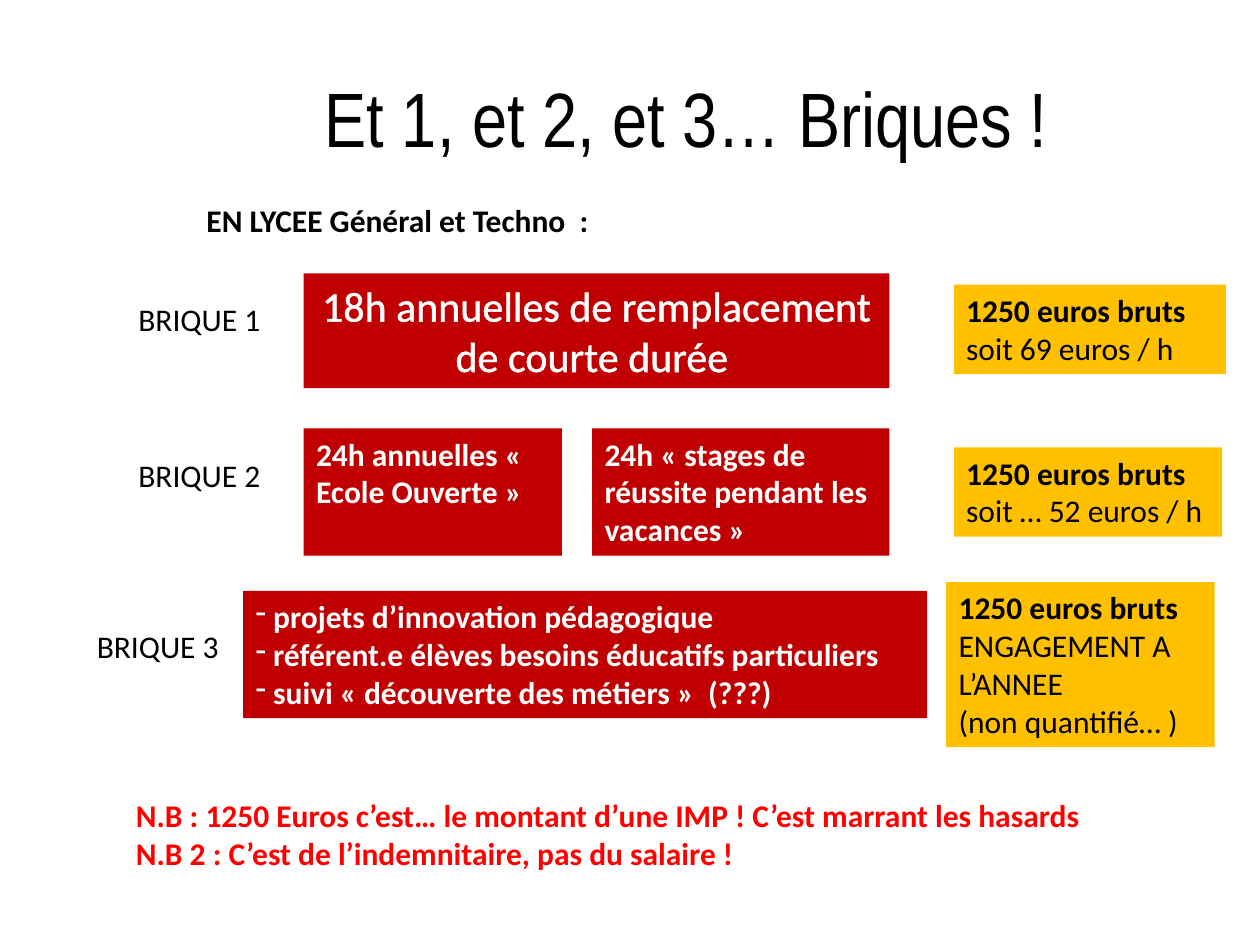
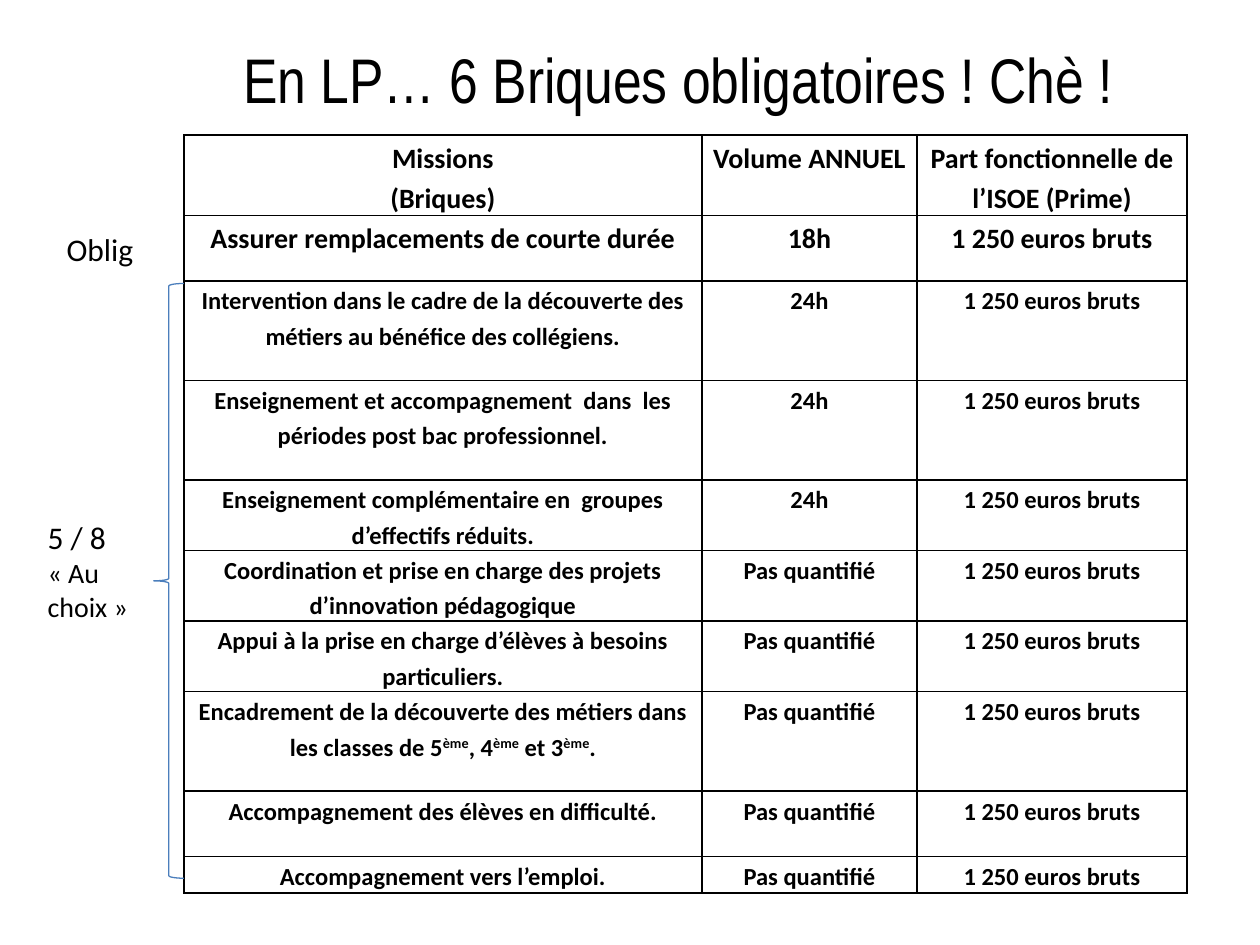
import pptx
import pptx.util
import pptx.dml.color
import pptx.enum.shapes
import pptx.enum.text
import pptx.oxml
import pptx.oxml.ns

Inches = pptx.util.Inches
Pt = pptx.util.Pt
ALIGN = pptx.enum.text.PP_ALIGN
SHAPE = pptx.enum.shapes.MSO_SHAPE
NS = pptx.oxml.ns.nsdecls("a")

COLORS = {
    "black": "000000",
    "white": "FFFFFF",
    "brick": "C00000",
    "amber": "FFC000",
    "red": "FF0000",
    "brace": "4B7EBC",
}
BODY_FONT = "Calibri"
TITLE_FONT = "Arial Narrow"

BONUS = "1250 euros bruts"
PRIME = "1 250 euros bruts"
UNCOUNTED = "Pas quantifié"
COLUMN_WIDTHS = [4.11, 1.71, 2.14]
MISSIONS = [
    (0.64, 16, "Missions\n(Briques)", "Volume ANNUEL", "Part fonctionnelle de l’ISOE (Prime)"),
    (0.52, 16, "Assurer remplacements de courte durée", "18h", PRIME),
    (0.79, 14, "Intervention dans le cadre de la découverte des métiers au bénéfice des collégiens.",
     "24h", PRIME),
    (0.79, 14, "Enseignement et accompagnement  dans  les périodes post bac professionnel.",
     "24h", PRIME),
    (0.56, 14, "Enseignement complémentaire en  groupes d’effectifs réduits.", "24h", PRIME),
    (0.56, 14, "Coordination et prise en charge des projets d’innovation pédagogique",
     UNCOUNTED, PRIME),
    (0.56, 14, "Appui à la prise en charge d’élèves à besoins particuliers.", UNCOUNTED, PRIME),
    (0.79, 14, "Encadrement de la découverte des métiers dans les classes de 5^ème^, 4^ème^ et 3^ème^.",
     UNCOUNTED, PRIME),
    (0.52, 14, "Accompagnement des élèves en difficulté.", UNCOUNTED, PRIME),
    (0.29, 14, "Accompagnement vers l’emploi.", UNCOUNTED, PRIME),
]


def rgb(name):
    """Return the named colour."""
    return pptx.dml.color.RGBColor.from_string(COLORS[name])


def style(r, size, color="black", bold=False, font=BODY_FONT):
    """Format one run."""
    r.font.name = font
    r.font.size = Pt(size)
    r.font.bold = bold
    r.font.color.rgb = rgb(color)


def fill_text(tf, text, size=18, color="black", bold=False, font=BODY_FONT, align=ALIGN.LEFT):
    """Write the lines of a text as paragraphs in one format."""
    tf.word_wrap = True
    tf.text = text
    for p in tf.paragraphs:
        p.alignment = align
        for r in p.runs:
            style(r, size, color, bold, font)


def add_text(slide, box, text, **fmt):
    """Add a text box and return its text frame."""
    tf = slide.shapes.add_textbox(*map(Inches, box)).text_frame
    fill_text(tf, text, **fmt)
    return tf


def add_title(slide, top, text, size, left):
    """Add the slide title."""
    tf = add_text(slide, (left, top, 7.96, 1.25), text, size=size, font=TITLE_FONT,
                  align=ALIGN.CENTER)
    tf.vertical_anchor = pptx.enum.text.MSO_ANCHOR.MIDDLE


def add_block(slide, box, fill, text, **fmt):
    """Add a filled rectangle with text and return its text frame."""
    sp = slide.shapes.add_shape(SHAPE.RECTANGLE, *map(Inches, box))
    sp.shadow.inherit = False
    sp.fill.solid()
    sp.fill.fore_color.rgb = rgb(fill)
    sp.line.fill.background()
    tf = sp.text_frame
    tf.vertical_anchor = pptx.enum.text.MSO_ANCHOR.TOP
    fill_text(tf, text, **fmt)
    return tf


def add_brick(slide, box, text, size=18, bold=True, align=ALIGN.LEFT):
    """Add a red brick with white text."""
    return add_block(slide, box, "brick", text, size=size, color="white", bold=bold, align=align)


def add_bonus(slide, box, detail):
    """Add an amber pay box with its amount in bold."""
    tf = add_block(slide, box, "amber", BONUS + "\n" + detail)
    tf.paragraphs[0].runs[0].font.bold = True


def outline_text(r, color, width):
    """Give the letters of a run an outline."""
    r.font._element.insert(0, pptx.oxml.parse_xml(
        f'<a:ln {NS} w="{Pt(width)}"><a:solidFill><a:srgbClr val="{COLORS[color]}"/>'
        '</a:solidFill></a:ln>'))


def add_dashes(tf, indent):
    """Turn the paragraphs into a dashed list."""
    for p in tf.paragraphs:
        pPr = p._p.get_or_add_pPr()
        pPr.set("marL", str(Inches(indent)))
        pPr.set("indent", str(-Inches(indent)))
        pPr.append(pptx.oxml.parse_xml(f'<a:buChar {NS} char="-"/>'))


def border_cell(cell, width):
    """Draw a black line on each side of a cell."""
    tcPr = cell._tc.get_or_add_tcPr()
    for side in "LRTB":
        tcPr.append(pptx.oxml.parse_xml(
            f'<a:ln{side} {NS} w="{Pt(width)}"><a:solidFill>'
            f'<a:srgbClr val="{COLORS["black"]}"/></a:solidFill></a:ln{side}>'))


def fill_cell(cell, text, size):
    """Write a bordered table cell, raising the parts between carets."""
    cell.margin_left = cell.margin_right = Inches(0.07)
    cell.margin_top = cell.margin_bottom = 0
    border_cell(cell, 1)
    cell.fill.background()
    tf = cell.text_frame
    for i, line in enumerate(text.split("\n")):
        p = tf.add_paragraph() if i else tf.paragraphs[0]
        p.alignment = ALIGN.CENTER
        p.line_spacing = 1.19
        for j, part in enumerate(line.split("^")):
            r = p.add_run()
            r.text = part
            style(r, size, bold=True)
            if j % 2:
                r.font._element.set("baseline", "30000")


def add_missions(slide, left, top):
    """Add the table of missions."""
    height = sum(row[0] for row in MISSIONS)
    table = slide.shapes.add_table(
        len(MISSIONS), len(COLUMN_WIDTHS), Inches(left), Inches(top),
        Inches(sum(COLUMN_WIDTHS)), Inches(height)).table
    table.first_row = table.horz_banding = False
    for column, width in zip(table.columns, COLUMN_WIDTHS):
        column.width = Inches(width)
    for row, (row_height, size, *texts) in zip(table.rows, MISSIONS):
        row.height = Inches(row_height)
        for cell, text in zip(row.cells, texts):
            fill_cell(cell, text, size)


def add_choices(slide, left, top):
    """Add the brace and the labels beside the table."""
    add_text(slide, (left + 0.15, top, 0.87, 0.4), "Oblig")
    sp = slide.shapes.add_shape(SHAPE.LEFT_BRACE, Inches(left + 0.94), Inches(top + 0.47),
                                Inches(0.24), Inches(4.72))
    sp.shadow.inherit = False
    sp.fill.background()
    sp.line.color.rgb = rgb("brace")
    sp.line.width = Pt(0.75)
    tf = add_text(slide, (left, top + 2.28, 0.87, 0.94), "5 / 8\n« Au choix »")
    tf.paragraphs[1].runs[0].font.size = Pt(16)


def add_brick_label(slide, left, top, number):
    """Add the label of a row of bricks."""
    add_text(slide, (left, top, 1.34, 0.4), f"BRIQUE {number}")


def first_row(slide, left, top):
    """Add the short replacement brick."""
    add_brick_label(slide, left, top + 0.16, 1)
    tf = add_brick(slide, (left + 1.41, top, 4.65, 0.91),
                   "18h annuelles de remplacement de courte durée ",
                   size=24, bold=False, align=ALIGN.CENTER)
    outline_text(tf.paragraphs[0].runs[0], "white", 1.45)
    add_bonus(slide, (left + 6.57, top + 0.09, 2.16, 0.71), "soit 69 euros / h")


def second_row(slide, left, top):
    """Add the open school and holiday course bricks."""
    add_brick_label(slide, left, top + 0.17, 2)
    add_brick(slide, (left + 1.41, top, 2.05, 1.01), "24h annuelles « Ecole Ouverte »")
    add_brick(slide, (left + 3.7, top, 2.36, 1.01),
              "24h « stages de réussite pendant les vacances »")
    add_bonus(slide, (left + 6.57, top + 0.15, 2.13, 0.71), "soit … 52 euros / h")


def third_row(slide, left, top):
    """Add the project brick."""
    add_brick_label(slide, left, top + 0.24, 3)
    tf = add_brick(slide, (left + 1.26, top, 5.43, 1.01),
                   "projets d’innovation pédagogique\n"
                   "référent.e élèves besoins éducatifs particuliers\n"
                   "suivi « découverte des métiers »  (???)")
    add_dashes(tf, 0.14)
    add_bonus(slide, (left + 6.84, top - 0.07, 2.13, 1.31),
              "ENGAGEMENT A L’ANNEE\n(non quantifié… )")


def bricks_slide(prs):
    """Build the slide of the three bricks."""
    slide = prs.slides.add_slide(prs.slide_layouts[6])
    add_title(slide, 0.3, "Et 1, et 2, et 3… Briques ! ", 44, 1.54)
    add_text(slide, (1.54, 1.55, 3.54, 0.4), "EN LYCEE Général et Techno  :", bold=True)
    first_row(slide, 1, 2.17)
    second_row(slide, 1, 3.4)
    third_row(slide, 0.67, 4.69)
    add_text(slide, (0.98, 6.27, 8.19, 0.71),
             "N.B : 1250 Euros c’est… le montant d’une IMP ! C’est marrant les hasards\n"
             "N.B 2 : C’est de l’indemnitaire, pas du salaire !", color="red", bold=True)


def missions_slide(prs):
    """Build the slide of the mission table."""
    slide = prs.slides.add_slide(prs.slide_layouts[6])
    add_title(slide, 0, "En LP… 6 Briques obligatoires ! Chè ! ", 36, 1.46)
    add_missions(slide, 1.46, 1.07)
    add_choices(slide, 0.28, 1.78)


def main():
    """Build and save the presentation."""
    prs = pptx.Presentation()
    prs.slide_width = Inches(10)
    prs.slide_height = Inches(7.5)
    bricks_slide(prs)
    missions_slide(prs)
    prs.save("out.pptx")


if __name__ == "__main__":
    main()
